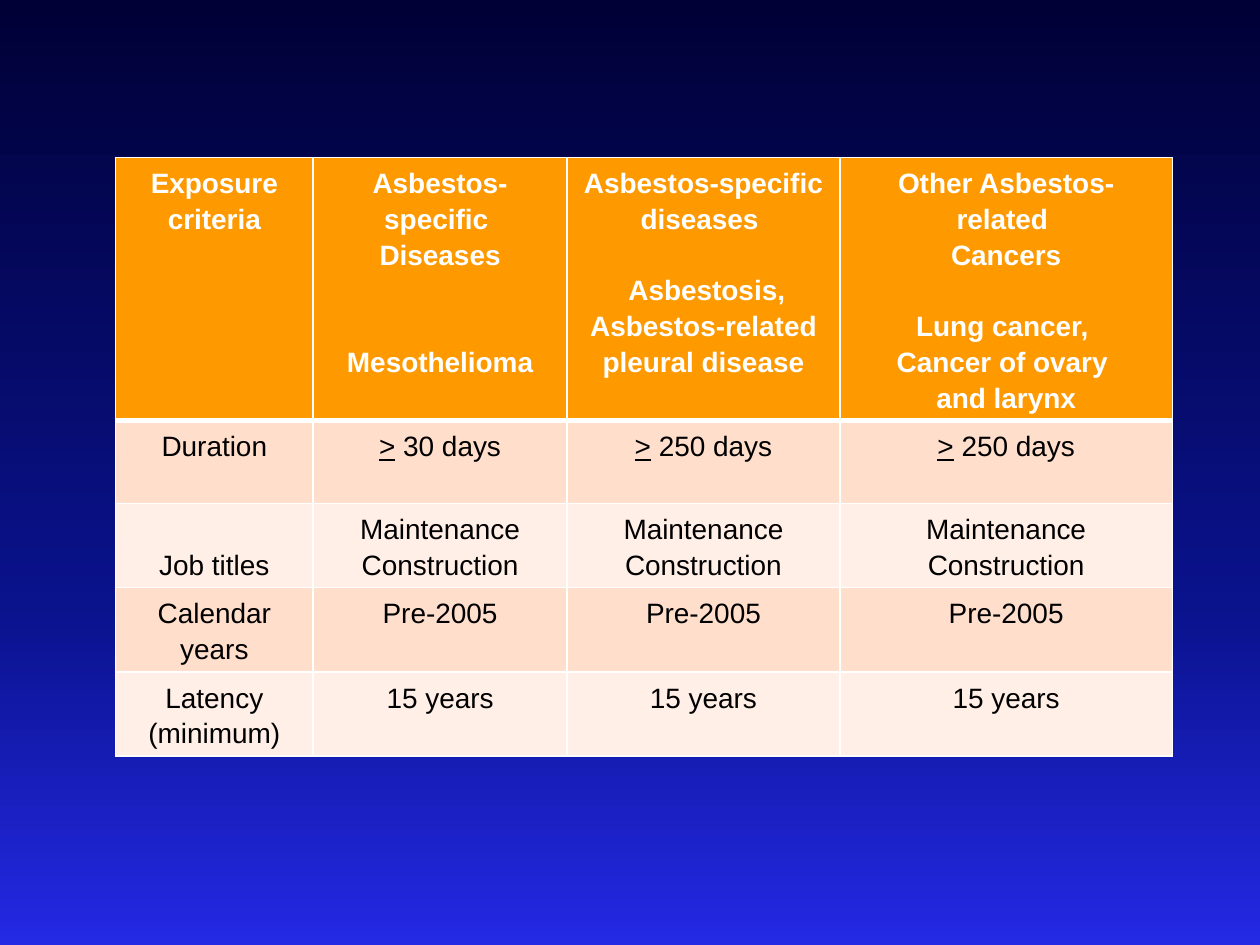
from copy import deepcopy

from lxml import etree
from pptx import Presentation
from pptx.dml.color import RGBColor
from pptx.enum import text
from pptx.oxml import ns
from pptx.util import Pt

# Content: each cell is a list of paragraphs, (lines of gap above, wording)
HEADER = [
    [(0, "Exposure criteria")],
    [(0, "Asbestos-specific "), (0, "Diseases"), (2, "Mesothelioma")],
    [(0, "Asbestos-specific diseases "), (1, " Asbestosis,"),
     (0, "Asbestos-related pleural disease")],
    [(0, "Other Asbestos-related "), (0, "Cancers"), (1, "Lung cancer, "),
     (0, "Cancer of ovary "), (0, "and larynx")],
]
WORKPLACES = [(0, "Maintenance"), (0, "Construction")]
CRITERIA = [
    [[(0, "Duration")], [(0, "> 30 days")], [(0, "> 250 days")], [(0, "> 250 days")]],
    [[(0, "Job titles")]] + [WORKPLACES] * 3,
    [[(0, "Calendar years")]] + [[(0, "Pre-2005")]] * 3,
    [[(0, "Latency"), (0, "(minimum)")]] + [[(0, "15 years")]] * 3,
]
BACKGROUND = [(0, "000036"), (0.64, "0A128C"), (1, "2429E4")]
BANDS = ["FFDECC", "FFEFE7"]
HEADER_FILL, WHITE, BLACK = "FF9900", "FFFFFF", "000000"

# Measures in points
LEFT, TOP = 66, 90
COLUMN_WIDTHS = [113, 145, 156, 190]
HEADER_HEIGHT, ROW_HEIGHT = 150, 47.5
LINE_HEIGHT = 20.4
THIN, THICK = 1, 3


def color(hex_string):
    return RGBColor.from_string(hex_string)


def paint_background(page):
    fill = page.background.fill
    fill.gradient()
    fill.gradient_angle = 270
    stop_list = page.element.find(".//" + ns.qn("a:gsLst"))
    stop_list.append(deepcopy(stop_list[0]))
    for stop, (position, shade) in zip(fill.gradient_stops, BACKGROUND):
        stop.position = position
        stop.color.rgb = color(shade)


def set_borders(cell, widths):
    """Draw white borders; the lines must precede the cell's fill."""
    properties = cell._tc.get_or_add_tcPr()
    for index, (side, width) in enumerate(widths.items()):
        line = etree.Element(ns.qn(f"a:ln{side}"), w=str(Pt(width)))
        solid = etree.SubElement(line, ns.qn("a:solidFill"))
        etree.SubElement(solid, ns.qn("a:srgbClr"), val=WHITE)
        properties.insert(index, line)


def add_span(para, wording, **formats):
    span = para.add_run()
    span.text = wording
    for name, value in {"name": "Arial", "size": Pt(16), **formats}.items():
        setattr(span.font, name, value)
    span.font.color.rgb = color(WHITE if formats["bold"] else BLACK)


def write_cell(cell, paragraphs, bold):
    frame = cell.text_frame
    for index, (gap, wording) in enumerate(paragraphs):
        para = frame.add_paragraph() if index else frame.paragraphs[0]
        para.alignment = text.PP_ALIGN.CENTER
        para.line_spacing = 1.15
        para.space_before = Pt(gap * LINE_HEIGHT)
        if wording.startswith(">"):
            add_span(para, ">", bold=bold, underline=True)
            wording = wording[1:]
        add_span(para, wording, bold=bold)


def add_criteria_table(page):
    rows = [HEADER] + CRITERIA
    heights = [HEADER_HEIGHT] + [ROW_HEIGHT] * len(CRITERIA)
    table = page.shapes.add_table(
        len(rows), len(COLUMN_WIDTHS), Pt(LEFT), Pt(TOP),
        Pt(sum(COLUMN_WIDTHS)), Pt(sum(heights))).table
    for column, width in zip(table.columns, COLUMN_WIDTHS):
        column.width = Pt(width)
    for r, (cells, height) in enumerate(zip(rows, heights)):
        table.rows[r].height = Pt(height)
        for c, paragraphs in enumerate(cells):
            cell = table.cell(r, c)
            is_header = r == 0
            write_cell(cell, paragraphs, is_header)
            cell.fill.solid()
            cell.fill.fore_color.rgb = color(
                HEADER_FILL if is_header else BANDS[(r - 1) % 2])
            set_borders(cell, {"L": THIN, "R": THIN,
                               "T": THICK if r == 1 else THIN,
                               "B": THICK if is_header else THIN})
    # "Job titles" sits level with the second line beside it
    table.cell(2, 0).vertical_anchor = text.MSO_ANCHOR.BOTTOM


def main():
    deck = Presentation()
    deck.slide_width, deck.slide_height = Pt(720), Pt(540)
    page = deck.slides.add_slide(deck.slide_layouts[6])
    paint_background(page)
    add_criteria_table(page)
    deck.save("out.pptx")


if __name__ == "__main__":
    main()
